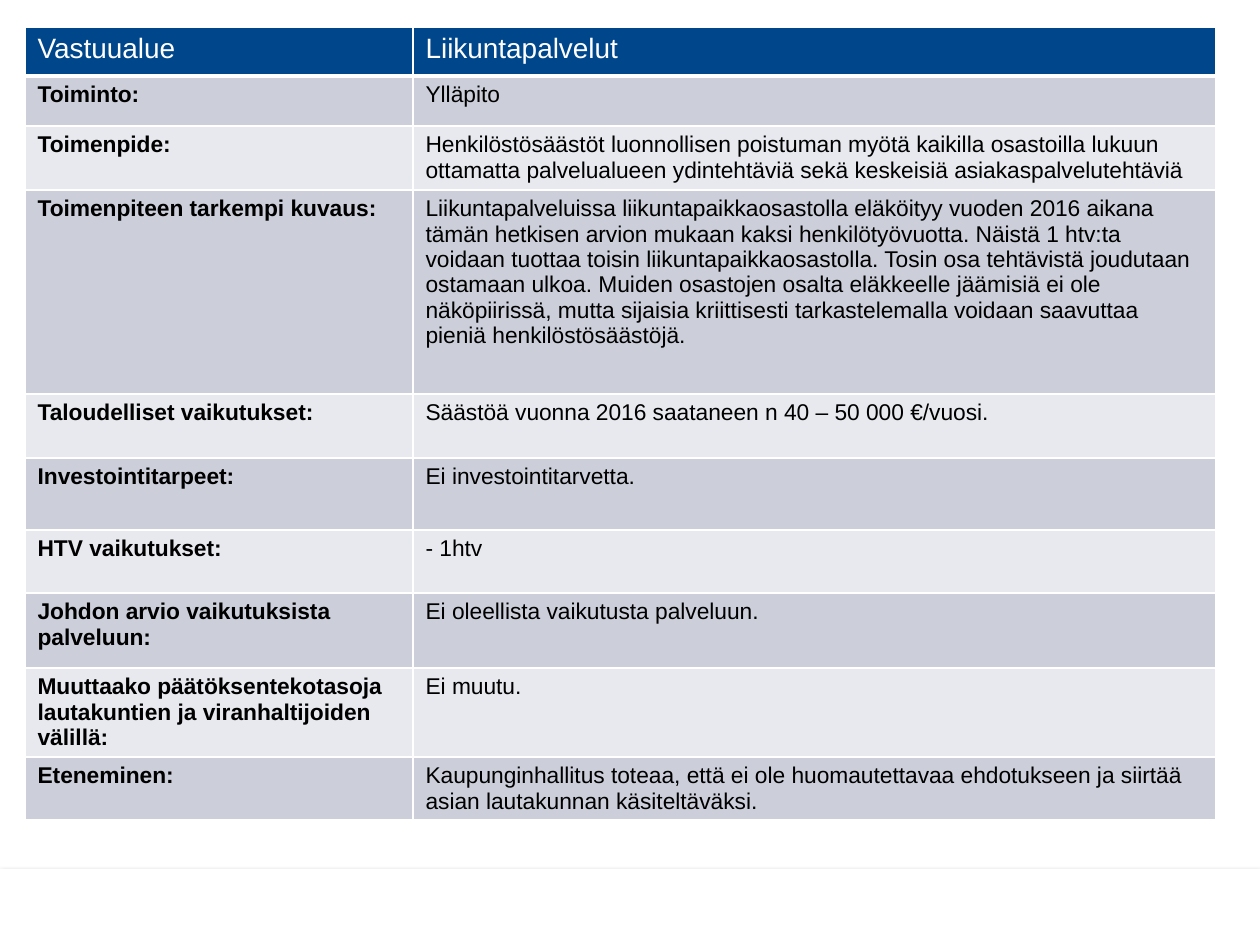
from typing import NamedTuple

from lxml.etree import SubElement
from pptx import Presentation
from pptx.dml.color import RGBColor
from pptx.enum.shapes import MSO_SHAPE
from pptx.oxml.ns import qn
from pptx.util import Emu, Pt

PX_PER_INCH = 126
EMU_PER_INCH = 914400

WHITE = RGBColor(0xFF, 0xFF, 0xFF)
BLACK = RGBColor(0x00, 0x00, 0x00)
NAVY = RGBColor(0x00, 0x46, 0x8B)
GREY = RGBColor(0xCC, 0xCF, 0xDA)
PALE = RGBColor(0xE7, 0xE9, 0xEE)

HEADER_FONT = {"name": "Arial", "size": Pt(16), "bold": False}
LABEL_FONT = {"name": "Arial", "size": Pt(13), "bold": True}
VALUE_FONT = LABEL_FONT | {"bold": False}


class Row(NamedTuple):
    height: int
    label: str
    value: str


TABLE_LEFT, TABLE_TOP = 25, 27
COLUMN_WIDTHS = (388, 803)
ROWS = (
    Row(49, "Vastuualue", "Liikuntapalvelut"),
    Row(50, "Toiminto:", "Ylläpito"),
    Row(64, "Toimenpide:",
        "Henkilöstösäästöt luonnollisen poistuman myötä kaikilla osastoilla lukuun "
        "ottamatta palvelualueen ydintehtäviä sekä keskeisiä asiakaspalvelutehtäviä"),
    Row(204, "Toimenpiteen tarkempi kuvaus:",
        "Liikuntapalveluissa liikuntapaikkaosastolla eläköityy vuoden 2016 aikana "
        "tämän hetkisen arvion mukaan kaksi henkilötyövuotta. Näistä 1 htv:ta "
        "voidaan tuottaa toisin liikuntapaikkaosastolla. Tosin osa tehtävistä joudutaan "
        "ostamaan ulkoa. Muiden osastojen osalta eläkkeelle jäämisiä ei ole "
        "näköpiirissä, mutta sijaisia kriittisesti tarkastelemalla voidaan saavuttaa "
        "pieniä henkilöstösäästöjä."),
    Row(64, "Taloudelliset vaikutukset:",
        "Säästöä vuonna 2016 saataneen n 40 – 50 000 €/vuosi."),
    Row(72, "Investointitarpeet:", "Ei investointitarvetta."),
    Row(63, "HTV vaikutukset:", "- 1htv"),
    Row(75, "Johdon arvio vaikutuksista palveluun:",
        "Ei oleellista vaikutusta palveluun."),
    Row(89, "Muuttaako päätöksentekotasoja lautakuntien ja viranhaltijoiden välillä:",
        "Ei muutu."),
    Row(63, "Eteneminen:",
        "Kaupunginhallitus toteaa, että ei ole huomautettavaa ehdotukseen ja siirtää "
        "asian lautakunnan käsiteltäväksi."),
)


def px(length: int) -> Emu:
    return Emu(round(length * EMU_PER_INCH / PX_PER_INCH))


def add_color(parent, color: RGBColor):
    return SubElement(parent, qn("a:srgbClr"), val=str(color))


def add_footer_band(slide) -> None:
    """Draw the white band whose soft shadow closes the content area."""
    band = slide.shapes.add_shape(MSO_SHAPE.RECTANGLE, 0, px(869), px(1260), px(76))
    band.fill.solid()
    band.fill.fore_color.rgb = WHITE
    band.line.fill.background()
    effects = SubElement(band._element.spPr, qn("a:effectLst"))
    shadow = SubElement(effects, qn("a:outerShdw"), blurRad=str(Pt(3.1)),
                        dist=str(Pt(1.8)), dir="5400000", rotWithShape="0")
    SubElement(add_color(shadow, BLACK), qn("a:alpha"), val="35000")


def set_borders(cell, bottom: int) -> None:
    properties = cell._tc.get_or_add_tcPr()
    for side, width in {"L": 1, "R": 1, "T": 1, "B": bottom}.items():
        line = SubElement(properties, qn(f"a:ln{side}"), w=str(Pt(width)))
        add_color(SubElement(line, qn("a:solidFill")), WHITE)


def fill_cell(cell, text: str, fill: RGBColor, color: RGBColor,
              font_format: dict, bottom: int) -> None:
    set_borders(cell, bottom)
    cell.fill.solid()
    cell.fill.fore_color.rgb = fill
    span = cell.text_frame.paragraphs[0].add_run()
    span.text = text
    for name, value in font_format.items():
        setattr(span.font, name, value)
    span.font.color.rgb = color


def add_measure_table(slide) -> None:
    frame = slide.shapes.add_table(
        len(ROWS), len(COLUMN_WIDTHS), px(TABLE_LEFT), px(TABLE_TOP),
        px(sum(COLUMN_WIDTHS)), px(sum(row.height for row in ROWS)))
    table = frame.table
    table.first_row = table.horz_banding = False
    for column, width in zip(table.columns, COLUMN_WIDTHS):
        column.width = px(width)
    for index, row in enumerate(ROWS):
        table.rows[index].height = px(row.height)
        if index == 0:
            fill, color, bottom = NAVY, WHITE, 3
            formats = (HEADER_FONT, HEADER_FONT)
        else:
            fill, color, bottom = (GREY if index % 2 else PALE), BLACK, 1
            formats = (LABEL_FONT, VALUE_FONT)
        for column, text in enumerate((row.label, row.value)):
            fill_cell(table.cell(index, column), text, fill, color,
                      formats[column], bottom)


def main() -> None:
    deck = Presentation()
    deck.slide_width, deck.slide_height = px(1260), px(945)
    slide = deck.slides.add_slide(deck.slide_layouts[6])
    add_footer_band(slide)
    add_measure_table(slide)
    deck.save("out.pptx")


if __name__ == "__main__":
    main()
